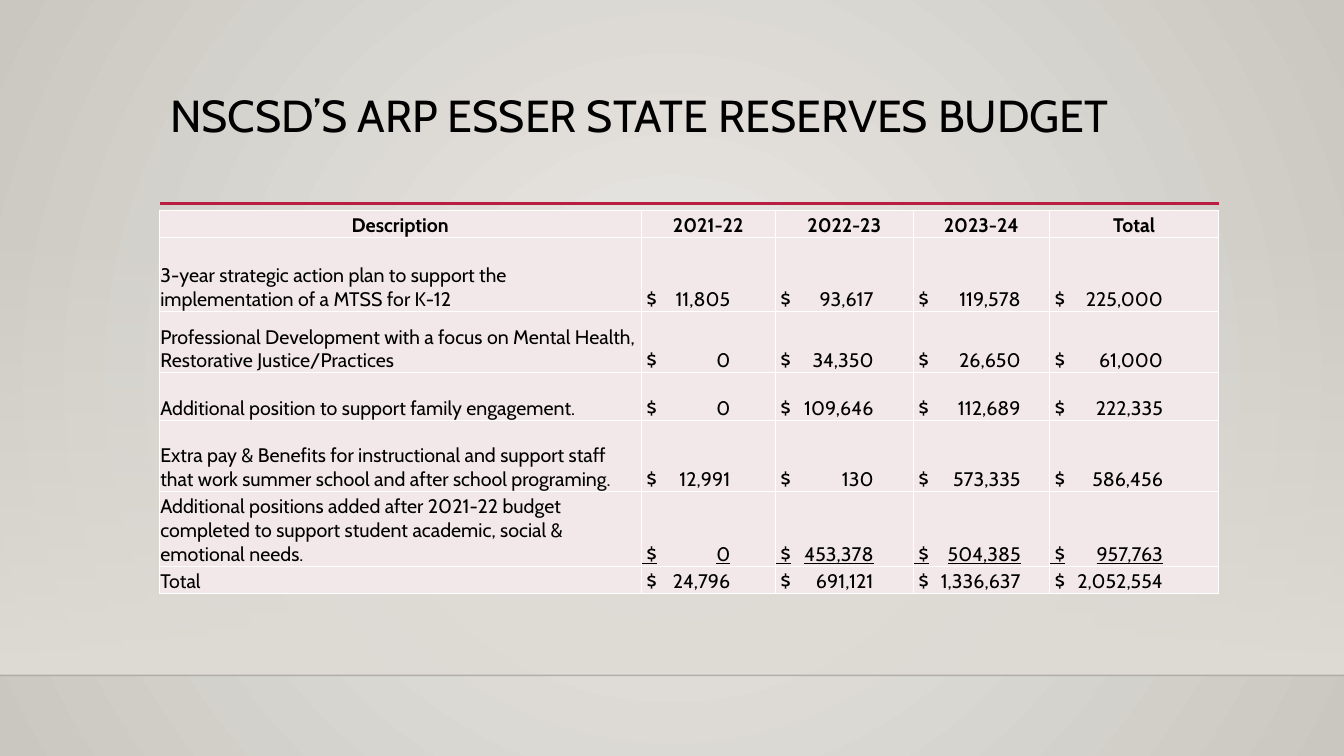
"""Build the state reserves budget slide with its year-by-year table."""
from lxml.etree import SubElement
from pptx import Presentation
from pptx.dml.color import RGBColor
from pptx.enum.shapes import MSO_CONNECTOR as CONN, MSO_SHAPE as SHAPE
from pptx.enum.text import MSO_ANCHOR as ANCHOR, PP_ALIGN as ALIGN
from pptx.oxml import parse_xml
from pptx.oxml.ns import nsdecls, qn
from pptx.util import Pt

BLACK = RGBColor(0x00, 0x00, 0x00)
RULE = RGBColor(0x00, 0x00, 0x01)
CRIMSON = RGBColor(0xB7, 0x1E, 0x42)
WHITE = RGBColor(0xFF, 0xFF, 0xFF)
BLUSH = RGBColor(0xF3, 0xE8, 0xE9)
LIGHT = RGBColor(0xEC, 0xEA, 0xE7)
DARK = RGBColor(0xCA, 0xC7, 0xC1)
FLOOR = RGBColor(0xDF, 0xDB, 0xD5)
FONT = "Cabin"
COLS = [344.2, 95.8, 98.6, 97.2, 121]
ROWS = [19.4, 52.6, 43.9, 33.8, 51.1, 53.3, 19.4]
TABS = [None, 63, 69.5, 76, 80.5]
BUDGET = [
    ["Description", "2021-22", "2022-23", "2023-24", "Total"],
    ["3-year strategic action plan to support the implementation of a MTSS for K-12",
     "11,805", "93,617", "119,578", "225,000"],
    ["Professional Development with a focus on Mental Health, Restorative Justice/Practices",
     "0", "34,350", "26,650", "61,000"],
    ["Additional position to support family engagement.",
     "0", "109,646", "112,689", "222,335"],
    ["Extra pay & Benefits for instructional and support staff that work summer school "
     "and after school programing.",
     "12,991", "130", "573,335", "586,456"],
    ["Additional positions added after 2021-22 budget completed to support student "
     "academic, social & emotional needs.",
     "0", "453,378", "504,385", "957,763"],
    ["Total", "24,796", "691,121", "1,336,637", "2,052,554"],
]


def write(tf, text, size=14, bold=False, underline=False, align=ALIGN.LEFT, tab=None):
    p = tf.paragraphs[0]
    p.alignment = align
    if tab:
        tabs = SubElement(p._p.get_or_add_pPr(), qn("a:tabLst"))
        SubElement(tabs, qn("a:tab"), pos=str(Pt(tab)), algn="r")
    r = p.add_run()
    r.text = text
    r.font.name = FONT
    r.font.size = Pt(size)
    r.font.bold = bold
    r.font.underline = underline
    r.font.color.rgb = BLACK
    return p


prs = Presentation()
prs.slide_width, prs.slide_height = Pt(960), Pt(540)
s = prs.slides.add_slide(prs.slide_layouts[5])

fill = s.background.fill
fill.gradient()
for stop, color in zip(fill.gradient_stops, (LIGHT, DARK)):
    stop.color.rgb = color
grad = s.element.find(".//" + qn("a:gradFill"))
grad.replace(grad.find(qn("a:lin")), parse_xml(
    f'<a:path {nsdecls("a")} path="circle">'
    '<a:fillToRect l="50000" t="50000" r="50000" b="50000"/></a:path>'))

floor = s.shapes.add_shape(SHAPE.RECTANGLE, 0, Pt(159.1), Pt(960), Pt(323.3))
floor.shadow.inherit = False
floor.line.fill.background()
floor.fill.gradient()
for stop in floor.fill.gradient_stops:
    stop.color.rgb = FLOOR
grad = floor._element.spPr.find(qn("a:gradFill"))
grad.find(qn("a:lin")).set("ang", "5400000")
SubElement(grad.find(".//" + qn("a:srgbClr")), qn("a:alpha"), val="0")

for x1, x2, y, color, width, alpha in [(0, 960, 482.4, RULE, 1, 20),
                                       (114.3, 871, 145.4, CRIMSON, 2.5, 100)]:
    line = s.shapes.add_connector(CONN.STRAIGHT, Pt(x1), Pt(y), Pt(x2), Pt(y))
    line.line.color.rgb = color
    line.line.width = Pt(width)
    spPr = line._element.spPr
    SubElement(spPr.find(".//" + qn("a:srgbClr")), qn("a:alpha"), val=str(alpha * 1000))
    SubElement(spPr, qn("a:effectLst"))

title = s.shapes.title
title.left, title.top, title.width, title.height = Pt(114.3), Pt(63.4), Pt(756), Pt(47.5)
title.text_frame.word_wrap = True
title.text_frame.vertical_anchor = ANCHOR.TOP
write(title.text_frame, "NSCSD’S ARP ESSER STATE RESERVES BUDGET", size=32).line_spacing = 0.9

frame = s.shapes.add_table(len(ROWS), len(COLS), Pt(113.8), Pt(150.5),
                           Pt(sum(COLS)), Pt(sum(ROWS)))
table = frame.table
table.first_row = table.horz_banding = False
for col, width in zip(table.columns, COLS):
    col.width = Pt(width)
for row, height in zip(table.rows, ROWS):
    row.height = Pt(height)

for i, entries in enumerate(BUDGET):
    for j, text in enumerate(entries):
        cell = table.cell(i, j)
        cell.margin_left = cell.margin_right = cell.margin_top = Pt(0.72)
        cell.margin_bottom = 0
        cell.vertical_anchor = ANCHOR.BOTTOM
        cell.fill.solid()
        cell.fill.fore_color.rgb = BLUSH
        tcPr = cell._tc.get_or_add_tcPr()
        for k, side in enumerate(("lnL", "lnR", "lnT", "lnB")):
            tcPr.insert(k, parse_xml(
                f'<a:{side} {nsdecls("a")} w="{Pt(1)}"><a:solidFill>'
                f'<a:srgbClr val="{WHITE}"/></a:solidFill></a:{side}>'))
        if i == 0:
            write(cell.text_frame, text, bold=True, align=ALIGN.CENTER)
        elif j == 0:
            write(cell.text_frame, text)
        else:
            write(cell.text_frame, f" $\t{text}", underline=i == 5, tab=TABS[j])

prs.save("out.pptx")
